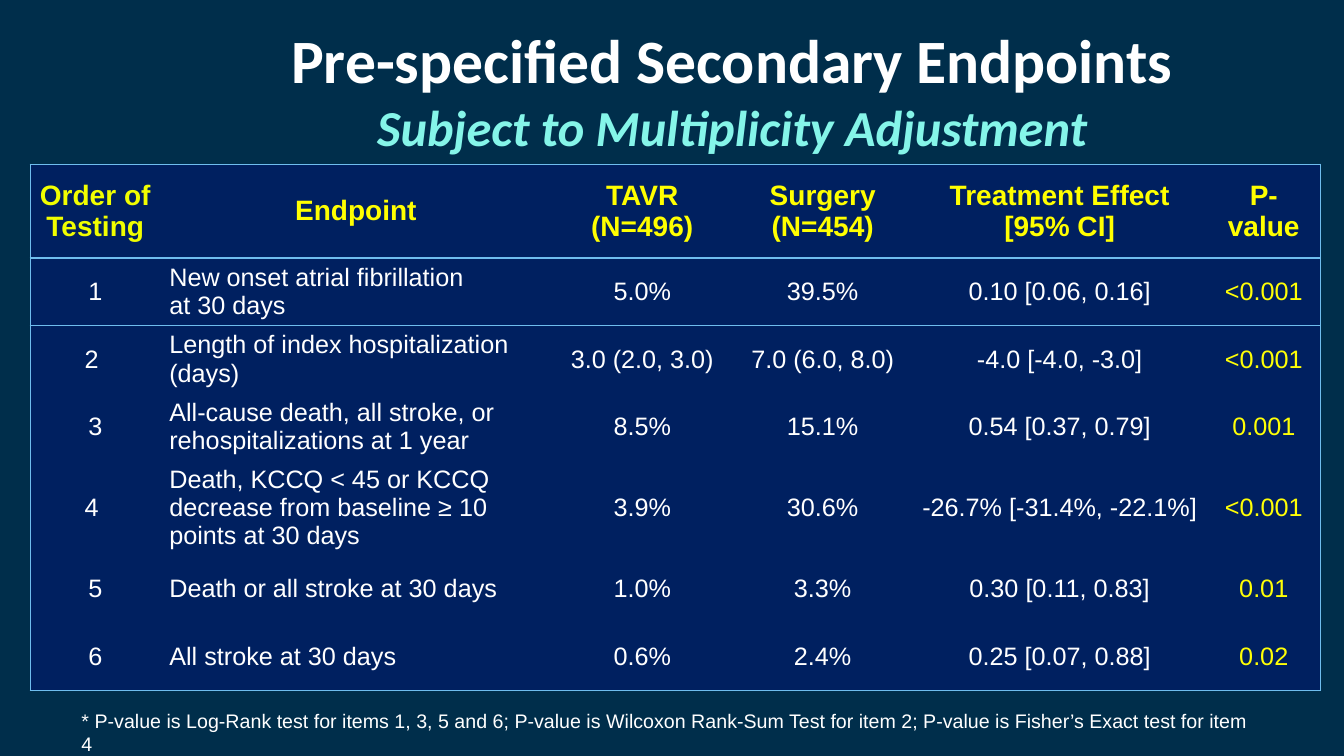
from lxml import etree
from pptx import Presentation
from pptx import util as u
from pptx.dml.color import RGBColor
from pptx.enum import text
from pptx.oxml.ns import qn

TITLE = "Pre-specified Secondary Endpoints"
SUBTITLE = "Subject to Multiplicity Adjustment"
ROWS = [
    ("Order of Testing", "Endpoint", "TAVR (N=496)", "Surgery (N=454)",
     "Treatment Effect [95% CI]", "P-value"),
    ("1", "New onset atrial fibrillation \vat 30 days", "5.0%", "39.5%",
     "0.10 [0.06, 0.16]", "<0.001"),
    ("2 ", "Length of index hospitalization (days)", "3.0 (2.0, 3.0)",
     "7.0 (6.0, 8.0)", "-4.0 [-4.0, -3.0]", "<0.001"),
    ("3", "All-cause death, all stroke, or rehospitalizations at 1 year",
     "8.5%", "15.1%", "0.54 [0.37, 0.79]", "0.001"),
    ("4 ", "Death, KCCQ < 45 or KCCQ decrease from baseline ≥ 10 points at 30 days",
     "3.9%", "30.6%", "-26.7% [-31.4%, -22.1%]", "<0.001"),
    ("5", "Death or all stroke at 30 days", "1.0%", "3.3%",
     "0.30 [0.11, 0.83]", "0.01"),
    ("6", "All stroke at 30 days", "0.6%", "2.4%",
     "0.25 [0.07, 0.88]", "0.02"),
]
FOOTNOTE = ("* P-value is Log-Rank test for items 1, 3, 5 and 6; P-value is Wilcoxon "
            "Rank-Sum Test for item 2; P-value is Fisher’s Exact test for item 4")

COLUMN_WIDTHS = (1.29, 3.88, 1.8, 1.78, 2.92, 1.13)
HEADER_HEIGHT, ROW_HEIGHT = 0.93, 0.67
ENDPOINT, P_VALUE = 1, 5

BACKGROUND = RGBColor(0x00, 0x2E, 0x4B)
NAVY = RGBColor(0x00, 0x20, 0x60)
BORDER = RGBColor(0x6F, 0xBD, 0xEE)
WHITE = RGBColor(0xFF, 0xFF, 0xFF)
AQUA = RGBColor(0x85, 0xF5, 0xE9)
LIME = RGBColor(0xF1, 0xFE, 0x00)
YELLOW = RGBColor(0xFF, 0xFF, 0x00)
P_VALUE_YELLOW = RGBColor(0xFF, 0xFF, 0x05)
NO_STYLE_NO_GRID = "{2D5ABB26-0587-4C30-8999-92F81FD0307C}"


def write(paragraph, words, *, size, color, font="Arial", bold=False,
          italic=False, align=text.PP_ALIGN.LEFT):
    """Append words to the paragraph; a vertical tab starts a new line."""
    paragraph.alignment = align
    for index, line in enumerate(words.split("\v")):
        if index:
            paragraph.add_line_break()
        run = paragraph.add_run()
        run.text = line
        run.font.name, run.font.size = font, u.Pt(size)
        run.font.bold, run.font.italic = bold, italic
        run.font.color.rgb = color


def add_text_box(slide, left, top, width, height, inset):
    box = slide.shapes.add_textbox(*map(u.Inches, (left, top, width, height)))
    frame = box.text_frame
    frame.word_wrap = True
    frame.margin_left = frame.margin_right = u.Inches(inset)
    frame.margin_top = frame.margin_bottom = u.Inches(0.05)
    return frame.paragraphs[0]


def set_borders(cell, sides):
    """Draw the given sides (L, R, T, B); call before filling the cell."""
    properties = cell._tc.get_or_add_tcPr()
    for side in sides:
        line = etree.SubElement(properties, qn(f"a:ln{side}"), w=str(u.Pt(1)))
        fill = etree.SubElement(line, qn("a:solidFill"))
        etree.SubElement(fill, qn("a:srgbClr"), val=str(BORDER))


def cell_format(row, column):
    align = text.PP_ALIGN.CENTER
    if row == 0:
        return dict(size=20, bold=True, align=align, color=YELLOW if column else LIME)
    if column == ENDPOINT:
        align = text.PP_ALIGN.LEFT
    return dict(size=18, align=align,
                color=P_VALUE_YELLOW if column == P_VALUE else WHITE)


def add_endpoint_table(slide):
    heights = [HEADER_HEIGHT] + [ROW_HEIGHT] * (len(ROWS) - 1)
    frame = slide.shapes.add_table(
        len(ROWS), len(COLUMN_WIDTHS), u.Inches(0.3), u.Inches(1.63),
        u.Inches(sum(COLUMN_WIDTHS)), u.Inches(sum(heights)))
    table = frame.table
    table.horz_banding = table.first_row = False
    table._tbl.tblPr.find(qn("a:tableStyleId")).text = NO_STYLE_NO_GRID
    for column, width in zip(table.columns, COLUMN_WIDTHS):
        column.width = u.Inches(width)
    last_row, last_column = len(ROWS) - 1, len(COLUMN_WIDTHS) - 1
    for r, (values, height) in enumerate(zip(ROWS, heights)):
        table.rows[r].height = u.Inches(height)
        for c, value in enumerate(values):
            cell = table.cell(r, c)
            cell.vertical_anchor = text.MSO_ANCHOR.MIDDLE
            cell.margin_left = cell.margin_right = u.Inches(0.09)
            edges = {"L": c == 0, "R": c == last_column,
                     "T": r <= 1, "B": r in (0, last_row)}
            set_borders(cell, [side for side, drawn in edges.items() if drawn])
            cell.fill.solid()
            cell.fill.fore_color.rgb = NAVY
            write(cell.text_frame.paragraphs[0], value, **cell_format(r, c))


def main():
    presentation = Presentation()
    presentation.slide_width = u.Inches(13.33)
    presentation.slide_height = u.Inches(7.5)
    slide = presentation.slides.add_slide(presentation.slide_layouts[6])
    slide.background.fill.solid()
    slide.background.fill.fore_color.rgb = BACKGROUND

    add_endpoint_table(slide)
    heading = add_text_box(slide, 1.6, 0.17, 11.33, 0.83, inset=0.05)
    style = dict(font="Calibri", bold=True, align=text.PP_ALIGN.CENTER)
    write(heading, TITLE, size=44, color=WHITE, **style)
    heading.add_line_break()
    write(heading, SUBTITLE, size=36, color=AQUA, italic=True, **style)
    footnote = add_text_box(slide, 0.71, 6.98, 11.92, 0.34, inset=0.1)
    write(footnote, FOOTNOTE, size=14, color=WHITE)
    presentation.save("out.pptx")


if __name__ == "__main__":
    main()
